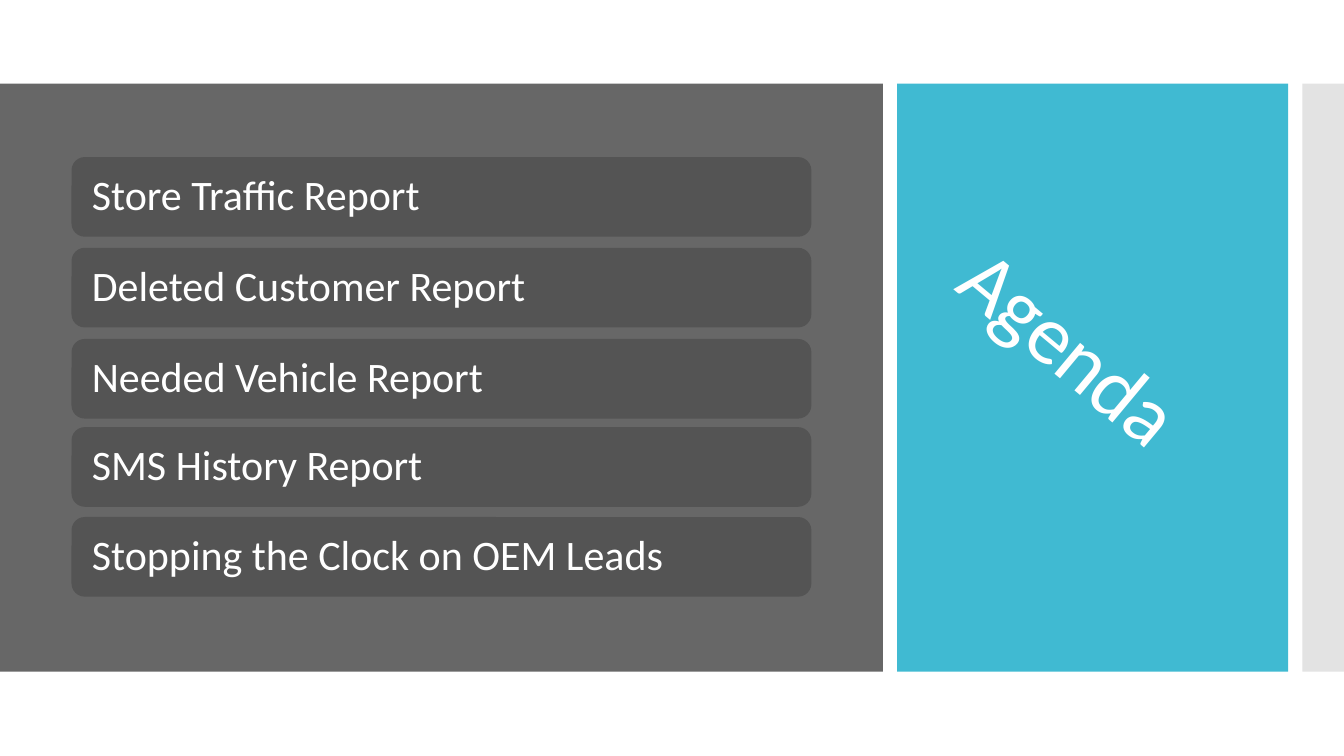
from dataclasses import dataclass

from pptx import Presentation
from pptx.dml.color import RGBColor
from pptx.enum.shapes import MSO_SHAPE as Preset
from pptx.enum.text import MSO_ANCHOR as Anchor, MSO_AUTO_SIZE as AutoSize, PP_ALIGN as Align
from pptx.shapes.autoshape import Shape
from pptx.slide import Slide
from pptx.util import Pt

WHITE = RGBColor(0xFF, 0xFF, 0xFF)
GREY = RGBColor(0x67, 0x67, 0x67)
DARK = RGBColor(0x54, 0x54, 0x54)
TEAL = RGBColor(0x40, 0xBA, 0xD2)
PALE = RGBColor(0xE3, 0xE3, 0xE3)

BAND_TOP, BAND_HEIGHT = 59.75, 420
ITEM_LEFT, ITEM_WIDTH, ITEM_HEIGHT = 51.1, 528.5, 56.9


@dataclass
class Panel:
    left: float
    width: float
    color: RGBColor


@dataclass
class AgendaItem:
    top: float
    text: str


PANELS = [
    Panel(0, 630.7, GREY),
    Panel(640.8, 279.4, TEAL),
    Panel(930.2, 29.8, PALE),
]
ITEMS = [
    AgendaItem(112.2, "Store Traffic Report"),
    AgendaItem(177, "Deleted Customer Report"),
    AgendaItem(242.1, "Needed Vehicle Report"),
    AgendaItem(305.1, "SMS History Report"),
    AgendaItem(369.3, "Stopping the Clock on OEM Leads"),
]


def add_block(page: Slide, preset: Preset, left: float, top: float,
              width: float, height: float, color: RGBColor) -> Shape:
    block = page.shapes.add_shape(preset, Pt(left), Pt(top), Pt(width), Pt(height))
    block.shadow.inherit = False
    block.fill.solid()
    block.fill.fore_color.rgb = color
    block.line.fill.background()
    return block


def write_text(shape: Shape, text: str, size: float, frame_format: dict) -> None:
    frame = shape.text_frame
    for name, value in frame_format.items():
        setattr(frame, name, value)
    para = frame.paragraphs[0]
    para.alignment = Align.LEFT
    para.line_spacing = 0.9
    span = para.add_run()
    span.text = text
    for name, value in {"name": "Calibri", "size": Pt(size)}.items():
        setattr(span.font, name, value)
    span.font.color.rgb = WHITE


def add_item(page: Slide, item: AgendaItem) -> None:
    block = add_block(page, Preset.ROUNDED_RECTANGLE, ITEM_LEFT, item.top,
                      ITEM_WIDTH, ITEM_HEIGHT, DARK)
    write_text(block, item.text, 30, {
        "word_wrap": True, "vertical_anchor": Anchor.MIDDLE,
        "margin_left": Pt(11.8), "margin_right": Pt(11.8),
    })


def place_title(page: Slide) -> None:
    title = page.shapes.title
    place = {"left": Pt(661), "top": Pt(228.2), "width": Pt(231.8),
             "height": Pt(66.2), "rotation": 39.8}
    for name, value in place.items():
        setattr(title, name, value)
    write_text(title, "Agenda", 60, {
        "word_wrap": True, "vertical_anchor": Anchor.MIDDLE, "auto_size": AutoSize.NONE,
    })
    span = title.text_frame.paragraphs[0].runs[0]
    span.font._element.set("spc", "-60")
    # Bring the title in front of the panels
    title.element.getparent().append(title.element)


def main() -> None:
    deck = Presentation()
    deck.slide_width, deck.slide_height = Pt(960), Pt(540)
    page = deck.slides.add_slide(deck.slide_layouts[5])
    page.background.fill.solid()
    page.background.fill.fore_color.rgb = WHITE

    # Band of panels
    for panel in PANELS:
        add_block(page, Preset.RECTANGLE, panel.left, BAND_TOP,
                  panel.width, BAND_HEIGHT, panel.color)

    # Slanted title
    place_title(page)

    # Agenda list
    for item in ITEMS:
        add_item(page, item)

    deck.save("out.pptx")


if __name__ == "__main__":
    main()
